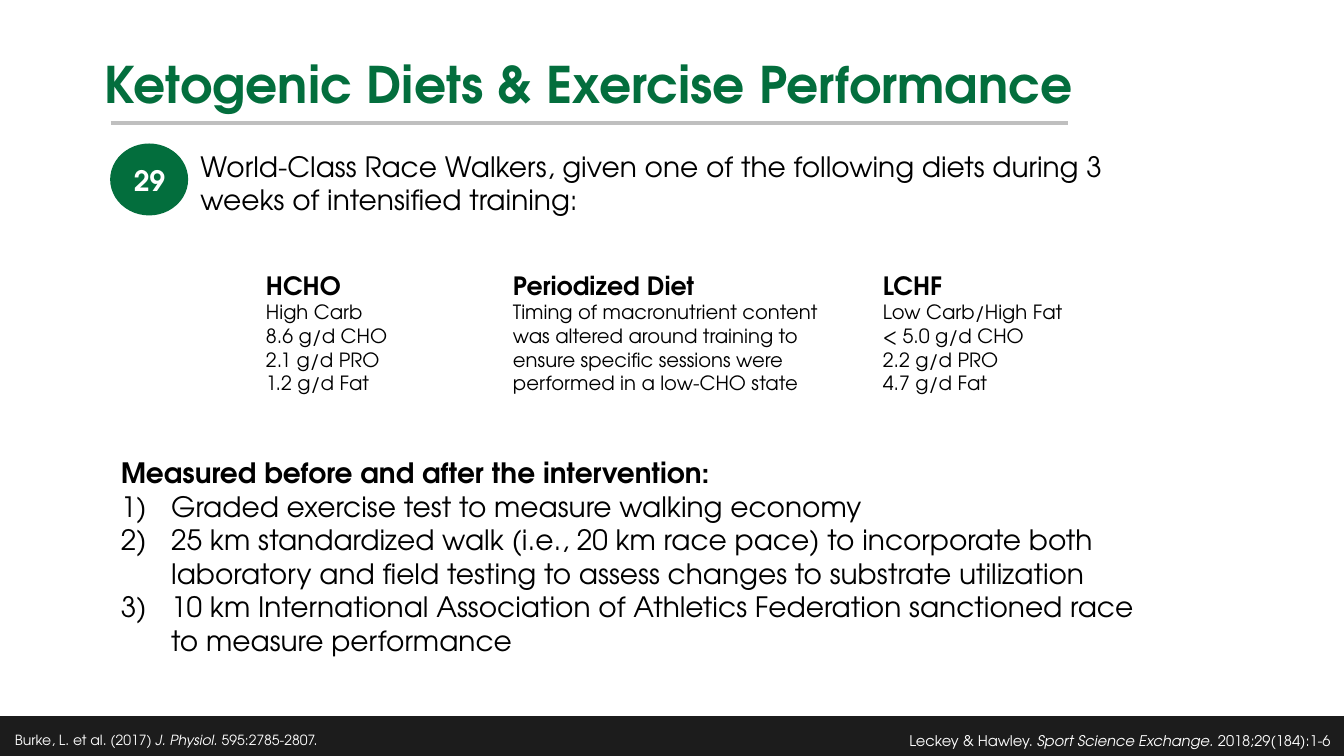
from dataclasses import dataclass

import pptx
import pptx.dml.color
import pptx.enum.shapes
import pptx.enum.text
import pptx.oxml.ns
import pptx.util
from lxml import etree

Pt = pptx.util.Pt
Align = pptx.enum.text.PP_ALIGN
Shape = pptx.enum.shapes.MSO_SHAPE


@dataclass(frozen=True)
class Theme:
    font: str = "TeX Gyre Adventor"
    green: str = "036E3D"
    ink: str = "000000"
    white: str = "FFFFFF"
    footer: str = "1C1C1C"
    rule: str = "BFBFBF"
    title: float = 36
    body: float = 20
    diet_name: float = 18
    diet_detail: float = 14
    right_source: float = 10.5
    left_source: float = 10


class SlideBuilder:
    def __init__(self, slide, theme):
        self.slide = slide
        self.theme = theme

    def rgb(self, value):
        return pptx.dml.color.RGBColor.from_string(value)

    def style(self, paragraph, size, color, bold=False, align=Align.LEFT):
        font = paragraph.font
        font.name, font.size, font.bold = self.theme.font, Pt(size), bold
        font.color.rgb = self.rgb(color)
        paragraph.alignment = align

    def title(self, text, box):
        heading = self.slide.shapes.title
        heading.left, heading.top, heading.width, heading.height = map(Pt, box)
        frame = heading.text_frame
        frame.text = text
        frame.auto_size = pptx.enum.text.MSO_AUTO_SIZE.NONE
        frame.vertical_anchor = pptx.enum.text.MSO_ANCHOR.TOP
        paragraph = frame.paragraphs[0]
        paragraph.line_spacing = 0.8
        self.style(paragraph, self.theme.title, self.theme.green, bold=True)

    def block(self, kind, box, color):
        block = self.slide.shapes.add_shape(kind, *map(Pt, box))
        block.shadow.inherit = False
        block.fill.solid()
        block.fill.fore_color.rgb = self.rgb(color)
        block.line.color.rgb = self.rgb(color)
        block.line.width = Pt(1)

    def rule(self, left, right, y):
        rule = self.slide.shapes.add_connector(
            pptx.enum.shapes.MSO_CONNECTOR.STRAIGHT, Pt(left), Pt(y), Pt(right), Pt(y))
        rule.line.color.rgb = self.rgb(self.theme.rule)
        rule.line.width = Pt(3)
        etree.SubElement(rule._element.spPr, pptx.oxml.ns.qn("a:effectLst"))

    def text(self, box, lines, size, color, bold=False, align=Align.LEFT):
        """Add one paragraph per line and return the paragraphs."""
        frame = self.slide.shapes.add_textbox(*map(Pt, box)).text_frame
        frame.word_wrap = True
        frame.text = "\n".join(lines)
        for paragraph in frame.paragraphs:
            self.style(paragraph, size, color, bold, align)
        return frame.paragraphs

    def diet(self, left, width, name, details):
        heading, *_ = self.text((left, 189.4, width, 97), [name, *details],
                                self.theme.diet_detail, self.theme.ink)
        self.style(heading, self.theme.diet_name, self.theme.ink, bold=True)

    def numbered(self, box, heading, items):
        first, *steps = self.text(box, [heading, *items], self.theme.body, self.theme.ink)
        first.font.bold = True
        for step in steps:
            properties = step._p.get_or_add_pPr()
            properties.set("marL", str(Pt(36)))
            properties.set("indent", str(-Pt(36)))
            numbering = etree.Element(pptx.oxml.ns.qn("a:buAutoNum"), type="arabicParenR")
            properties.insert(0, numbering)

    def source(self, box, parts, size, align=Align.LEFT):
        """Add a citation whose middle part, the journal, is italic."""
        citation = self.text(box, [""], size, self.theme.white, align=align)[0]
        for index, part in enumerate(parts):
            run = citation.add_run()
            run.text = part
            run.font.italic = index == 1


def main():
    deck = pptx.Presentation()
    deck.slide_width, deck.slide_height = Pt(960), Pt(540)
    theme = Theme()
    page = SlideBuilder(deck.slides.add_slide(deck.slide_layouts[5]), theme)

    page.block(Shape.RECTANGLE, (0, 512, 960, 28), theme.footer)
    page.block(Shape.OVAL, (79.2, 103, 54.7, 50.4), theme.green)
    page.title("Ketogenic Diets & Exercise Performance", (67.7, 42.5, 825.8, 67))
    page.source((556.6, 519, 401, 21),
                ("Leckey & Hawley. ", "Sport Science Exchange. ", "2018;29(184):1-6"),
                theme.right_source, Align.RIGHT)
    page.rule(79.2, 763.2, 87.8)

    page.diet(182.9, 181.4, "HCHO",
              ["High Carb", "8.6 g/d CHO", "2.1 g/d PRO", "1.2 g/d Fat"])
    page.diet(359.3, 241.2, "Periodized Diet",
              ["Timing of macronutrient content was altered around training to "
               "ensure specific sessions were performed in a low-CHO state"])
    page.diet(623.5, 270, "LCHF",
              ["Low Carb/High Fat", "< 5.0 g/d CHO", "2.2 g/d PRO", "4.7 g/d Fat"])

    page.text((73.4, 113, 67, 31.7), ["29"], theme.body, theme.white,
              bold=True, align=Align.CENTER)
    page.text((136.1, 103, 660.2, 55.4),
              ["World-Class Race Walkers, given one of the following diets during "
               "3 weeks of intensified training:"], theme.body, theme.ink)
    page.numbered((79.2, 321.8, 753.8, 152.6),
                  "Measured before and after the intervention:",
                  ["Graded exercise test to measure walking economy",
                   "25 km standardized walk (i.e., 20 km race pace) to incorporate both "
                   "laboratory and field testing to assess changes to substrate utilization",
                   "10 km International Association of Athletics Federation sanctioned "
                   "race to measure performance"])
    page.source((3.6, 519, 540, 19.4),
                ("Burke, L. et al. (2017) ", "J. Physiol.", " 595:2785-2807."),
                theme.left_source)
    deck.save("out.pptx")


if __name__ == "__main__":
    main()
